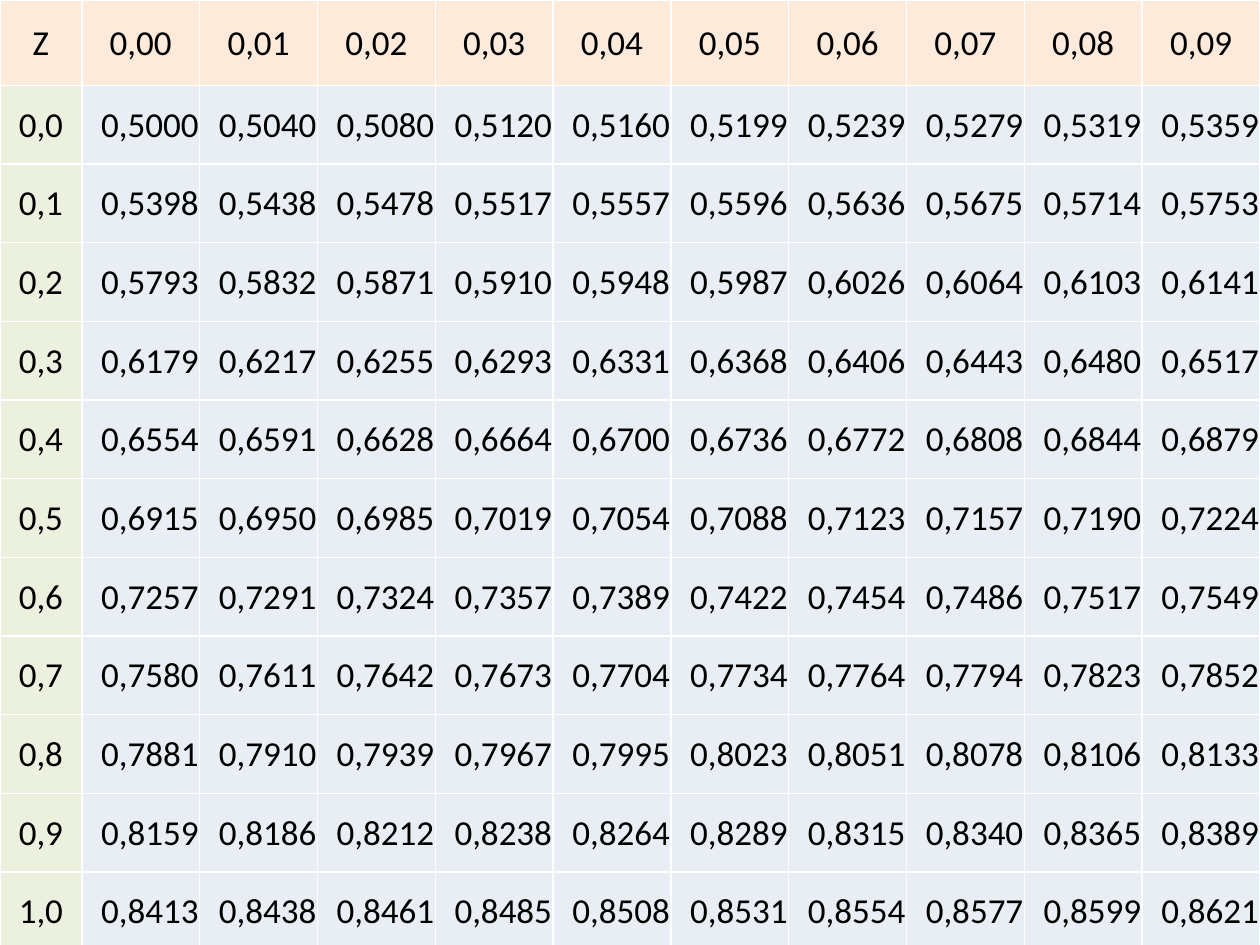
from lxml.etree import SubElement
from pptx import Presentation
from pptx.dml.color import RGBColor
from pptx.enum.text import MSO_ANCHOR, PP_ALIGN
from pptx.oxml.ns import qn
from pptx.util import Cm, Pt

# Content: cumulative standard normal probabilities
HEADER = ["Ζ"] + [f"0,0{digit}" for digit in range(10)]
PROBABILITIES = {
    "0,0": "0,5000 0,5040 0,5080 0,5120 0,5160 0,5199 0,5239 0,5279 0,5319 0,5359",
    "0,1": "0,5398 0,5438 0,5478 0,5517 0,5557 0,5596 0,5636 0,5675 0,5714 0,5753",
    "0,2": "0,5793 0,5832 0,5871 0,5910 0,5948 0,5987 0,6026 0,6064 0,6103 0,6141",
    "0,3": "0,6179 0,6217 0,6255 0,6293 0,6331 0,6368 0,6406 0,6443 0,6480 0,6517",
    "0,4": "0,6554 0,6591 0,6628 0,6664 0,6700 0,6736 0,6772 0,6808 0,6844 0,6879",
    "0,5": "0,6915 0,6950 0,6985 0,7019 0,7054 0,7088 0,7123 0,7157 0,7190 0,7224",
    "0,6": "0,7257 0,7291 0,7324 0,7357 0,7389 0,7422 0,7454 0,7486 0,7517 0,7549",
    "0,7": "0,7580 0,7611 0,7642 0,7673 0,7704 0,7734 0,7764 0,7794 0,7823 0,7852",
    "0,8": "0,7881 0,7910 0,7939 0,7967 0,7995 0,8023 0,8051 0,8078 0,8106 0,8133",
    "0,9": "0,8159 0,8186 0,8212 0,8238 0,8264 0,8289 0,8315 0,8340 0,8365 0,8389",
    "1,0": "0,8413 0,8438 0,8461 0,8485 0,8508 0,8531 0,8554 0,8577 0,8599 0,8621",
}
ROWS = [HEADER] + [[z, *values.split()] for z, values in PROBABILITIES.items()]

# Style
FONT, FONT_SIZE = "Calibri", Pt(20)
BLACK = RGBColor(0x00, 0x00, 0x00)
WHITE = RGBColor(0xFF, 0xFF, 0xFF)
PEACH = RGBColor(0xFD, 0xEA, 0xDA)
GREEN = RGBColor(0xEB, 0xF1, 0xDE)
PALE_BLUE = RGBColor(0xE9, 0xED, 0xF4)

# Sizes
SLIDE_WIDTH, SLIDE_HEIGHT = Cm(25.4), Cm(19.05)
TABLE_HEIGHT = Cm(19.17)
HEADER_HEIGHT, Z_WIDTH = Cm(1.72), Cm(1.65)
MARGIN = Cm(0.02)


def set_borders(cell, color, width):
    properties = cell._tc.get_or_add_tcPr()
    for position, side in enumerate(("a:lnL", "a:lnR", "a:lnT", "a:lnB")):
        line = SubElement(properties, qn(side), w=str(width))
        fill = SubElement(line, qn("a:solidFill"))
        SubElement(fill, qn("a:srgbClr"), val=str(color))
        properties.insert(position, line)  # borders come before the fill


def fill_cell(cell, text, color, alignment):
    cell.fill.solid()
    cell.fill.fore_color.rgb = color
    set_borders(cell, WHITE, Pt(1))
    cell.vertical_anchor = MSO_ANCHOR.MIDDLE
    cell.margin_left = cell.margin_right = cell.margin_top = MARGIN
    cell.margin_bottom = 0
    paragraph = cell.text_frame.paragraphs[0]
    paragraph.text = text
    paragraph.alignment = alignment
    font = paragraph.runs[0].font
    font.name, font.size, font.color.rgb = FONT, FONT_SIZE, BLACK


def main():
    presentation = Presentation()
    presentation.slide_width, presentation.slide_height = SLIDE_WIDTH, SLIDE_HEIGHT
    slide = presentation.slides.add_slide(presentation.slide_layouts[6])

    # Table grid
    table = slide.shapes.add_table(
        len(ROWS), len(HEADER), 0, 0, SLIDE_WIDTH, TABLE_HEIGHT).table
    table.first_row = table.horz_banding = False
    value_width = (SLIDE_WIDTH - Z_WIDTH) // (len(HEADER) - 1)
    value_height = (TABLE_HEIGHT - HEADER_HEIGHT) // (len(ROWS) - 1)
    for index, column in enumerate(table.columns):
        column.width = value_width if index else Z_WIDTH
    for index, row in enumerate(table.rows):
        row.height = value_height if index else HEADER_HEIGHT

    # Cells: header row, z column, probabilities
    for row_index, row in enumerate(ROWS):
        for column_index, text in enumerate(row):
            if row_index == 0:
                look = PEACH, PP_ALIGN.CENTER
            elif column_index == 0:
                look = GREEN, PP_ALIGN.CENTER
            else:
                look = PALE_BLUE, PP_ALIGN.RIGHT
            fill_cell(table.cell(row_index, column_index), text, *look)

    presentation.save("out.pptx")


if __name__ == "__main__":
    main()
